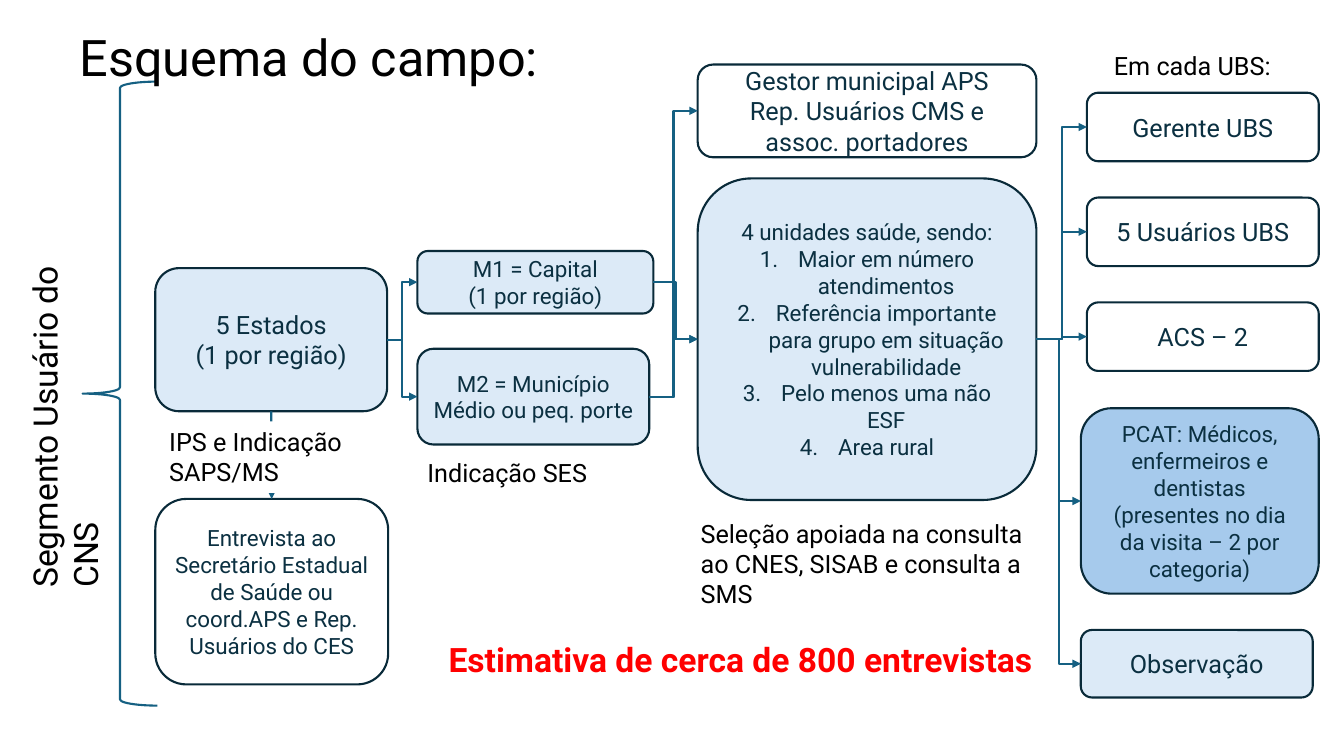
from dataclasses import dataclass

from lxml import etree
from pptx import Presentation
from pptx.dml.color import RGBColor
from pptx.enum.shapes import MSO_CONNECTOR, MSO_SHAPE
from pptx.enum.text import MSO_ANCHOR, PP_ALIGN
from pptx.oxml.ns import qn
from pptx.shapes.autoshape import Shape
from pptx.slide import Slide
from pptx.text.text import TextFrame
from pptx.util import Inches, Pt

ROUNDED, BRACE = MSO_SHAPE.FLOWCHART_ALTERNATE_PROCESS, MSO_SHAPE.LEFT_BRACE
ELBOW, STRAIGHT = MSO_CONNECTOR.ELBOW, MSO_CONNECTOR.STRAIGHT
CENTER, LEFT = PP_ALIGN.CENTER, PP_ALIGN.LEFT
MIDDLE, TOP = MSO_ANCHOR.MIDDLE, MSO_ANCHOR.TOP
LEFT_SIDE, BOTTOM_SIDE, RIGHT_SIDE, TOP_SIDE = 1, 2, 3, 0


@dataclass(frozen=True)
class Theme:
    font: str = "Roboto"
    ink: str = "000000"
    box_ink: str = "0B3041"
    outline: str = "092A39"
    link: str = "156082"
    alert: str = "FF0000"
    paper: str = "FFFFFF"
    pale: str = "DCEAF7"
    strong: str = "A6CAEC"
    title: int = 36
    large: int = 24
    normal: int = 18
    small: int = 16
    line: float = 1.5


THEME = Theme()


@dataclass(frozen=True)
class Box:
    name: str
    left: float
    top: float
    width: float
    height: float
    lines: tuple[str, ...]
    fill: str = ""
    size: int = THEME.normal
    numbered: bool = False


@dataclass(frozen=True)
class Label:
    left: float
    top: float
    width: float
    height: float
    text: str
    size: int = THEME.normal
    color: str = THEME.ink
    bold: bool = False
    fill: str = ""
    anchor: MSO_ANCHOR = TOP
    rotation: int = 0
    spacing: float = 1.0


UBS_LEFT, UBS_TOP, UBS_STEP = 10.78, 0.92, 1.04
UBS_BOXES = [
    Box(name, UBS_LEFT, UBS_TOP + row * UBS_STEP, 2.3, 0.68, (text,))
    for row, (name, text) in enumerate(
        [("gerente", "Gerente UBS"), ("usuarios", "5 Usuários UBS"), ("acs", "ACS – 2")]
    )
]

BOXES = UBS_BOXES + [
    Box("estados", 1.54, 2.66, 2.3, 1.42, ("5 Estados", "(1 por região)"), THEME.pale),
    Box("secretario", 1.54, 4.95, 2.31, 1.84,
        ("Entrevista ao Secretário Estadual de Saúde ou coord.APS e Rep. Usuários do CES",),
        size=THEME.small),
    Box("capital", 4.14, 2.49, 2.34, 0.62, ("M1 = Capital", "(1 por região)"),
        THEME.pale, THEME.small),
    Box("municipio", 4.14, 3.46, 2.3, 0.95, ("M2 = Município", "Médio ou peq. porte"),
        THEME.pale, THEME.small),
    Box("gestor", 6.92, 0.64, 3.36, 0.92,
        ("Gestor municipal APS", "Rep. Usuários CMS e assoc. portadores")),
    Box("unidades", 6.92, 1.77, 3.36, 3.19,
        ("4 unidades saúde, sendo:", "Maior em número atendimentos",
         "Referência importante para grupo em situação vulnerabilidade",
         "Pelo menos uma não ESF", "Area rural"),
        THEME.pale, THEME.small, numbered=True),
    Box("pcat", 10.72, 4.05, 2.36, 1.84,
        ("PCAT: Médicos, enfermeiros e dentistas",
         "(presentes no dia da visita – 2 por categoria)"),
        THEME.strong, THEME.small),
    Box("observacao", 10.72, 6.25, 2.3, 0.67, ("Observação",), THEME.pale),
]

LINKS = [
    ("estados", "capital"), ("estados", "municipio"),
    ("capital", "unidades"), ("municipio", "unidades"), ("municipio", "gestor"),
    ("unidades", "gerente"), ("unidades", "usuarios"), ("unidades", "acs"),
    ("unidades", "pcat"), ("unidades", "observacao"),
]

LABELS = [
    Label(0.69, -0.17, 6.03, 1.54, "Esquema do campo:", THEME.title,
          anchor=MIDDLE, spacing=0.9),
    Label(10.95, 0.45, 2.07, 0.4, "Em cada UBS:"),
    Label(4.14, 4.49, 1.95, 0.4, "Indicação SES"),
    Label(6.85, 5.09, 3.49, 1.01,
          "Seleção apoiada na consulta ao CNES, SISAB e consulta a SMS"),
    Label(1.58, 4.18, 2.5, 0.71, "IPS e Indicação SAPS/MS", fill=THEME.paper),
    Label(-1.59, 3.65, 4.06, 0.5, "Segmento Usuário do CNS", THEME.large, rotation=270),
    Label(4.35, 6.29, 6.12, 0.5, "Estimativa de cerca de 800 entrevistas",
          THEME.large, THEME.alert, bold=True),
]


def rgb(color: str) -> RGBColor:
    return RGBColor.from_string(color)


def write(frame: TextFrame, lines: tuple[str, ...], size: int, color: str,
          align: PP_ALIGN, numbered: bool = False, bold: bool = False,
          spacing: float = 1.0) -> None:
    frame.word_wrap = True
    for index, line in enumerate(lines):
        para = frame.paragraphs[0] if index == 0 else frame.add_paragraph()
        para.alignment = align
        para.line_spacing = spacing
        if numbered and index > 0:
            props = para._p.get_or_add_pPr()
            indent = Inches(0.38)
            props.set("marL", str(indent))
            props.set("indent", str(-indent))
            etree.SubElement(props, qn("a:buFont"), typeface="+mj-lt")
            etree.SubElement(props, qn("a:buAutoNum"), type="arabicPeriod")
        span = para.add_run()
        span.text = line
        span.font.name = THEME.font
        span.font.size = Pt(size)
        span.font.bold = bold
        span.font.color.rgb = rgb(color)


def add_outline(page: Slide, kind: MSO_SHAPE, left: float, top: float, width: float,
                height: float, line: str, fill: str = "") -> Shape:
    shape = page.shapes.add_shape(kind, Inches(left), Inches(top), Inches(width), Inches(height))
    shape.shadow.inherit = False
    if fill:
        shape.fill.solid()
        shape.fill.fore_color.rgb = rgb(fill)
    else:
        shape.fill.background()
    shape.line.color.rgb = rgb(line)
    shape.line.width = Pt(THEME.line)
    return shape


def add_box(page: Slide, box: Box) -> Shape:
    shape = add_outline(page, ROUNDED, box.left, box.top, box.width, box.height,
                        THEME.outline, box.fill)
    shape.text_frame.vertical_anchor = MIDDLE
    write(shape.text_frame, box.lines, box.size, THEME.box_ink, CENTER, box.numbered)
    return shape


def add_arrow(page: Slide, kind: MSO_CONNECTOR, start: Shape, start_side: int,
              end: Shape, end_side: int) -> None:
    arrow = page.shapes.add_connector(kind, start.left, start.top, end.left, end.top)
    arrow.begin_connect(start, start_side)
    arrow.end_connect(end, end_side)
    arrow.line.color.rgb = rgb(THEME.link)
    arrow.line.width = Pt(THEME.line)
    etree.SubElement(arrow.line._get_or_add_ln(), qn("a:tailEnd"), type="triangle")
    etree.SubElement(arrow._element.spPr, qn("a:effectLst"))


def add_label(page: Slide, label: Label) -> None:
    shape = page.shapes.add_textbox(Inches(label.left), Inches(label.top),
                                    Inches(label.width), Inches(label.height))
    shape.rotation = label.rotation
    if label.fill:
        shape.fill.solid()
        shape.fill.fore_color.rgb = rgb(label.fill)
    shape.text_frame.vertical_anchor = label.anchor
    write(shape.text_frame, (label.text,), label.size, label.color, LEFT,
          bold=label.bold, spacing=label.spacing)


def main() -> None:
    deck = Presentation()
    deck.slide_width, deck.slide_height = Inches(13.33), Inches(7.5)
    page = deck.slides.add_slide(deck.slide_layouts[6])

    # Boxes of the field scheme
    shapes = {box.name: add_box(page, box) for box in BOXES}

    # Arrows between the stages
    for start, end in LINKS:
        add_arrow(page, ELBOW, shapes[start], RIGHT_SIDE, shapes[end], LEFT_SIDE)
    add_arrow(page, STRAIGHT, shapes["estados"], BOTTOM_SIDE, shapes["secretario"], TOP_SIDE)

    # Brace spanning the whole scheme
    add_outline(page, BRACE, 0.82, 0.81, 0.74, 6.19, THEME.link)

    # Title and captions
    for label in LABELS:
        add_label(page, label)

    deck.save("out.pptx")


if __name__ == "__main__":
    main()
